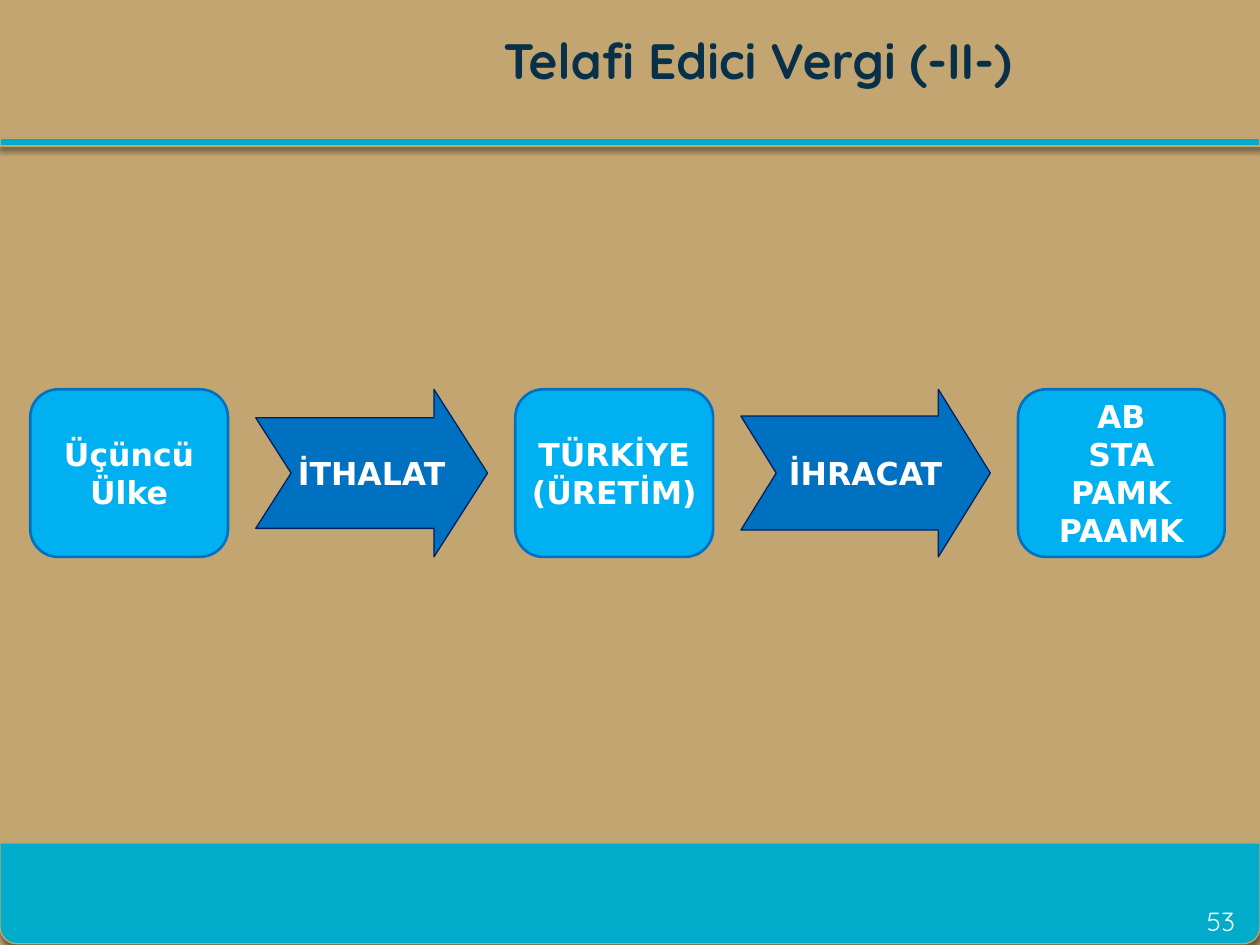
from lxml.etree import SubElement
from pptx import Presentation
from pptx.dml.color import RGBColor
from pptx.enum.shapes import MSO_SHAPE
from pptx.enum.text import MSO_ANCHOR, PP_ALIGN
from pptx.oxml.ns import qn
from pptx.util import Inches, Pt

SAND, TEAL, NAVY, WHITE = "C3A572", "00ACC9", "083048", "FFFFFF"
SKY, BLUE, DARK = "00B0F0", "0070C0", "002060"


def color(code):
    return RGBColor.from_string(code)


def write(frame, text, font="DejaVu Sans", size=18, ink=WHITE, bold=False,
          inset=None):
    """Fill a text frame, one centred paragraph per line."""
    frame.word_wrap = True
    frame.vertical_anchor = MSO_ANCHOR.MIDDLE
    if inset is not None:
        frame.margin_left = frame.margin_right = Inches(inset)
        frame.margin_top = frame.margin_bottom = Inches(inset)
    frame.text = text
    for para in frame.paragraphs:
        para.alignment = PP_ALIGN.CENTER
        para.font.name = font
        para.font.size = Pt(size)
        para.font.bold = bold
        para.font.color.rgb = color(ink)


def shade(shape):
    """Give a shape a soft shadow that falls straight down."""
    shape.shadow.inherit = False
    effects = shape._element.spPr.find(qn("a:effectLst"))
    outer = SubElement(effects, qn("a:outerShdw"), blurRad=str(Pt(3)),
                       dist=str(Pt(2)), dir="5400000", rotWithShape="0")
    tint = SubElement(outer, qn("a:srgbClr"), val="000000")
    SubElement(tint, qn("a:alpha"), val="45000")


class Deck:
    """Holds the style and the current slide."""
    font = "Quicksand"
    row_top, row_high = 3.09, 1.33

    def __init__(self):
        self.prs = Presentation()
        self.prs.slide_width, self.prs.slide_height = Inches(10), Inches(7.5)
        self.slide = self.prs.slides.add_slide(self.prs.slide_layouts[5])
        fill = self.slide.background.fill
        fill.solid()
        fill.fore_color.rgb = color(SAND)

    def shape(self, kind, box, fill, line, width=0.75):
        item = self.slide.shapes.add_shape(kind, *map(Inches, box))
        item.shadow.inherit = False
        item.fill.solid()
        item.fill.fore_color.rgb = color(fill)
        item.line.color.rgb = color(line)
        item.line.width = Pt(width)
        return item

    def band(self, kind, box, turn=0):
        item = self.shape(kind, box, TEAL, SAND)
        item.rotation = turn
        shade(item)

    def title(self, text, box):
        item = self.slide.shapes.title
        item.left, item.top, item.width, item.height = map(Inches, box)
        write(item.text_frame, text, font=self.font, size=28.4, ink=NAVY,
              bold=True)

    def number(self, text, box):
        item = self.slide.shapes.add_textbox(*map(Inches, box))
        write(item.text_frame, text, font=self.font, size=15)

    def stage(self, text, left, wide):
        item = self.shape(MSO_SHAPE.ROUNDED_RECTANGLE,
                          (left, self.row_top, wide, self.row_high),
                          SKY, BLUE, 1.5)
        write(item.text_frame, text, bold=True, inset=0)

    def arrow(self, text, left, wide, shaft, head):
        item = self.shape(MSO_SHAPE.NOTCHED_RIGHT_ARROW,
                          (left, self.row_top, wide, self.row_high),
                          BLUE, DARK)
        item.adjustments[0], item.adjustments[1] = shaft, head
        write(item.text_frame, text, bold=True, inset=0)


def main():
    deck = Deck()
    deck.band(MSO_SHAPE.ROUND_2_SAME_RECTANGLE, (0, 6.69, 10, 0.8), turn=180)
    deck.band(MSO_SHAPE.RECTANGLE, (0, 1.1, 10, 0.06))
    deck.title("Telafi Edici Vergi (-II-)", (2.03, 0.21, 7.97, 0.52))
    deck.number("53", (9.38, 7.17, 0.62, 0.28))

    left, gap = 0.24, 0.22
    flow = [
        (deck.stage, "Üçüncü\nÜlke", 1.57),
        (deck.arrow, "İTHALAT", 1.84, 0.66, 0.32),
        (deck.stage, "TÜRKİYE\n(ÜRETİM)", 1.57),
        (deck.arrow, "İHRACAT", 1.98, 0.68, 0.31),
        (deck.stage, "AB\nSTA\nPAMK\nPAAMK", 1.64),
    ]
    for draw, text, wide, *form in flow:
        draw(text, left, wide, *form)
        left += wide + gap

    deck.prs.save("out.pptx")


if __name__ == "__main__":
    main()
